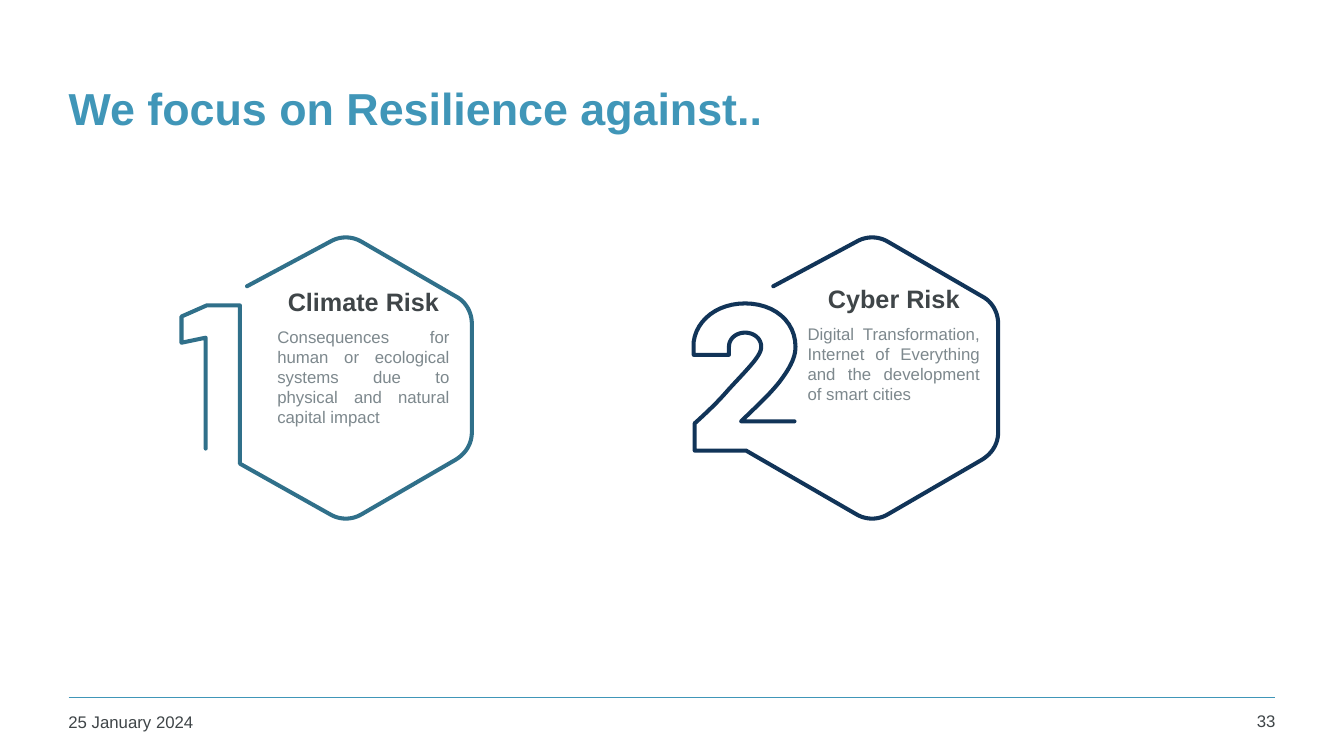
"""Build the slide on resilience against climate and cyber risk."""
from lxml import etree
from pptx import Presentation
from pptx.dml.color import RGBColor
from pptx.enum.dml import MSO_LINE
from pptx.enum.shapes import MSO_CONNECTOR
from pptx.enum.text import MSO_ANCHOR, PP_ALIGN
from pptx.oxml.ns import qn
from pptx.util import Inches, Pt

LEFT, MID, RIGHT, JUST = PP_ALIGN.LEFT, PP_ALIGN.CENTER, PP_ALIGN.RIGHT, PP_ALIGN.JUSTIFY
TOP, CENTRE, BASE = MSO_ANCHOR.TOP, MSO_ANCHOR.MIDDLE, MSO_ANCHOR.BOTTOM
STRAIGHT, SOLID = MSO_CONNECTOR.STRAIGHT, MSO_LINE.SOLID
COLORS = {"sky": "4096B8", "teal": "30708A", "navy": "113458",
          "dark": "3F4548", "grey": "7D888D"}
STEPS = 12


def write(box, text, size, color, bold=False, align=LEFT, anchor=TOP, pad=0.1):
    """Fill a box with one styled paragraph."""
    frame = box.text_frame
    frame.word_wrap = True
    frame.vertical_anchor = anchor
    frame.margin_left = frame.margin_right = Inches(pad)
    frame.text = text
    para = frame.paragraphs[0]
    para.alignment = align
    font = para.runs[0].font
    font.name, font.size, font.bold = "Arial", Pt(size), bold
    font.color.rgb = RGBColor.from_string(COLORS[color])


def trace(parts):
    """Turn line ends and cubic curves into a list of points."""
    points = []
    for part in parts:
        if len(part) == 2:
            points.append(part)
            continue
        x0, y0 = points[-1]
        x1, y1, x2, y2, x3, y3 = part
        for step in range(1, STEPS + 1):
            t = step / STEPS
            a, b, c, d = (1 - t) ** 3, 3 * t * (1 - t) ** 2, 3 * t * t * (1 - t), t ** 3
            points.append((a * x0 + b * x1 + c * x2 + d * x3,
                           a * y0 + b * y1 + c * y2 + d * y3))
    return points


deck = Presentation()
deck.slide_width, deck.slide_height = Inches(13.33), Inches(7.5)
slide = deck.slides.add_slide(deck.slide_layouts[5])
shapes = slide.shapes

title = shapes.title
title.left, title.top = Inches(0.58), Inches(0.44)
title.width, title.height = Inches(12.09), Inches(1.25)
write(title, "We focus on Resilience against..", 32, "sky", True, anchor=CENTRE)

hexagon = [
    (2.45, 2.84), (3.27, 2.4), (3.37, 2.34, 3.49, 2.34, 3.59, 2.4),
    (4.52, 2.94), (4.62, 2.99, 4.68, 3.1, 4.68, 3.21),
    (4.68, 4.29), (4.68, 4.4, 4.62, 4.5, 4.52, 4.56),
    (3.59, 5.1), (3.49, 5.16, 3.37, 5.16, 3.27, 5.1),
]
one = [(2.38, 4.6), (2.38, 3.03), (2.05, 3.03), (1.8, 3.14), (1.8, 3.4),
       (2.04, 3.35), (2.04, 4.45)]
two = [
    (7.4, 4.47), (6.89, 4.47), (6.89, 4.2), (7, 4.1, 7.11, 4, 7.23, 3.86),
    (7.36, 3.72), (7.5, 3.57, 7.55, 3.5, 7.55, 3.44),
    (7.55, 3.36, 7.48, 3.3, 7.39, 3.3), (7.3, 3.3, 7.23, 3.36, 7.23, 3.44),
    (7.23, 3.52), (6.88, 3.52), (6.88, 3.39),
    (6.91, 3.17, 7.12, 3.01, 7.39, 3.01), (7.68, 3.01, 7.89, 3.19, 7.89, 3.44),
    (7.89, 3.56, 7.82, 3.67, 7.73, 3.79), (7.65, 3.89, 7.58, 3.96, 7.35, 4.18),
    (7.88, 4.18),
]
risks = [
    (0, one, "teal", 2.62, 2.79, 1.11, "Climate Risk",
     "Consequences for human or ecological systems due to physical and natural capital impact"),
    (5.22, two, "navy", 7.88, 2.76, 0.91, "Cyber Risk",
     "Digital Transformation, Internet of Everything and the development of smart cities"),
]
for shift, digit, color, left, top, height, name, body in risks:
    points = [(x + shift, y) for x, y in trace(hexagon)] + trace(digit)
    start, *rest = [(Inches(x), Inches(y)) for x, y in points]
    pen = shapes.build_freeform(*start)
    pen.add_line_segments(rest, close=False)
    badge = pen.convert_to_shape()
    badge.shadow.inherit = False
    badge.fill.background()
    badge.line.color.rgb = RGBColor.from_string(COLORS[color])
    badge.line.width = Pt(2.9)
    stroke = badge.line._get_or_add_ln()
    stroke.set("cap", "rnd")
    etree.SubElement(stroke, qn("a:round"))

    head = shapes.add_textbox(Inches(left), Inches(top), Inches(1.97), Inches(0.4))
    write(head, name, 18, "dark", True, MID, BASE, 0)
    note = shapes.add_textbox(Inches(left + 0.13), Inches(top + 0.4), Inches(1.71), Inches(height))
    write(note, body, 12, "grey", align=JUST, pad=0)

rule = shapes.add_connector(STRAIGHT, Inches(0.68), Inches(6.92), Inches(12.65), Inches(6.92))
rule.line.color.rgb = RGBColor.from_string(COLORS["sky"])
rule.line.width = Pt(1)
rule.line.dash_style = SOLID
etree.SubElement(rule._element.spPr, qn("a:effectLst"))
rule._element.remove(rule._element.find(qn("p:style")))

date = shapes.add_textbox(Inches(0.58), Inches(7.01), Inches(2.94), Inches(0.36))
write(date, "25 January 2024", 12, "dark")
page = shapes.add_textbox(Inches(11.81), Inches(7), Inches(0.94), Inches(0.37))
write(page, "33", 12, "dark", align=RIGHT)

deck.save("out.pptx")
